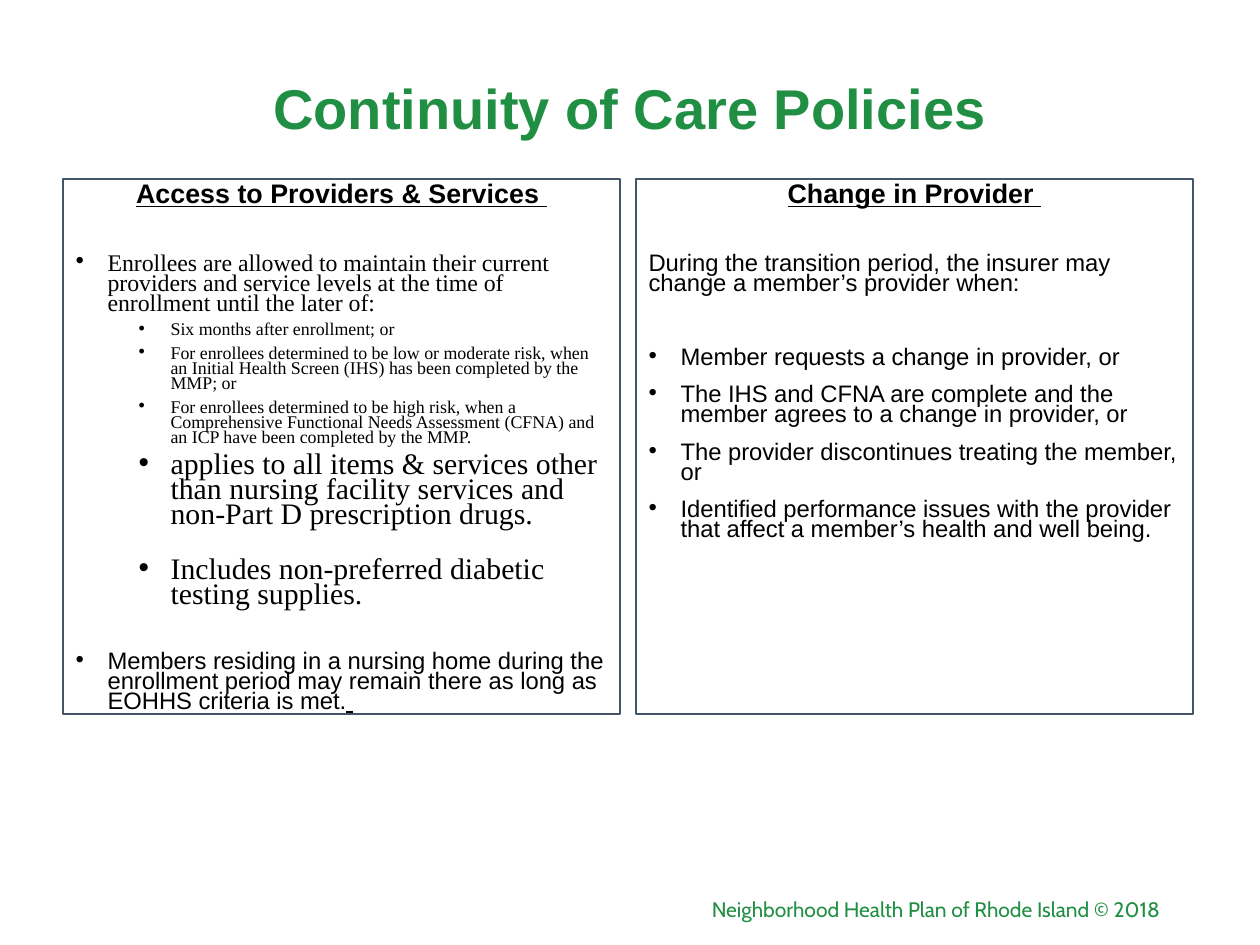
from dataclasses import dataclass

from lxml import etree
from pptx import Presentation
from pptx.dml.color import RGBColor
from pptx.enum.text import MSO_ANCHOR, MSO_AUTO_SIZE, PP_ALIGN
from pptx.oxml.ns import qn
from pptx.util import Pt

PX = 914400 / 126
CENTER, RIGHT = PP_ALIGN.CENTER, PP_ALIGN.RIGHT
MIDDLE, TOP = MSO_ANCHOR.MIDDLE, MSO_ANCHOR.TOP
NO_FIT = MSO_AUTO_SIZE.NONE


@dataclass
class Theme:
    green = RGBColor(0x20, 0x8F, 0x44)
    black = RGBColor(0, 0, 0)
    border = RGBColor(0x44, 0x54, 0x6A)
    sans = "Arial"
    serif = "Times New Roman"
    footer_font = "Cabin"
    title = 32
    heading = 15.3
    body = 13.6
    detail = 10.2
    emphasis = 17
    footer = 12


theme = Theme()


def place(shape, left, top, width, height, anchor):
    """Position a shape in px and fix how its text sits inside it."""
    shape.left, shape.top = round(left * PX), round(top * PX)
    shape.width, shape.height = round(width * PX), round(height * PX)
    frame = shape.text_frame
    frame.word_wrap = True
    frame.auto_size = NO_FIT
    frame.vertical_anchor = anchor
    return frame


def add_text(paragraph, text, font, size, color, bold=False, underline=False):
    run = paragraph.add_run()
    run.text = text
    run.font.name = font
    run.font.size = Pt(size)
    run.font.color.rgb = color
    run.font.bold = bold
    run.font.underline = underline


prs = Presentation()
prs.slide_width, prs.slide_height = round(1260 * PX), round(945 * PX)
slide = prs.slides.add_slide(prs.slide_layouts[3])
title, left_column, right_column = slide.placeholders

# Title, raised above the middle of its box
title_frame = place(title, 87, 50, 1086, 183, MIDDLE)
title_frame.margin_bottom = round(66 * PX)
title_line = title_frame.paragraphs[0]
title_line.alignment = CENTER
title_line.line_spacing = 0.9
add_text(title_line, "Continuity of Care Policies", theme.sans, theme.title,
         theme.green, bold=True)

# Each entry: text, font, size, text indent in px (0 = no bullet), space before
access_entries = [
    ("Enrollees are allowed to maintain their current providers and service "
     "levels at the time of enrollment until the later of:",
     theme.serif, theme.body, 32, 27),
    ("Six months after enrollment; or", theme.serif, theme.detail, 95, 5),
    ("For enrollees determined to be low or moderate risk, when an Initial "
     "Health Screen (IHS) has been completed by the MMP; or",
     theme.serif, theme.detail, 95, 5),
    ("For enrollees determined to be high risk, when a Comprehensive "
     "Functional Needs Assessment (CFNA) and an ICP have been completed by "
     "the MMP.", theme.serif, theme.detail, 95, 5),
    ("applies to all items & services other than nursing facility services "
     "and non-Part D prescription drugs.",
     theme.serif, theme.emphasis, 95, 5),
    ("Includes non-preferred diabetic testing supplies.",
     theme.serif, theme.emphasis, 95, 17),
    ("Members residing in a nursing home during the enrollment period may "
     "remain there as long as EOHHS criteria is met.",
     theme.sans, theme.body, 32, 25),
]
change_entries = [
    ("During the transition period, the insurer may change a member’s "
     "provider when:", theme.sans, theme.body, 0, 27),
    ("Member requests a change in provider, or",
     theme.sans, theme.body, 32, 31),
    ("The IHS and CFNA are complete and the member agrees to a change in "
     "provider, or", theme.sans, theme.body, 32, 10),
    ("The provider discontinues treating the member, or",
     theme.sans, theme.body, 32, 10),
    ("Identified performance issues with the provider that affect a member’s "
     "health and well being.", theme.sans, theme.body, 32, 10),
]
columns = [
    (left_column, "Access to Providers & Services ", access_entries),
    (right_column, "Change in Provider ", change_entries),
]

for index, (column, heading, entries) in enumerate(columns):
    column_frame = place(column, 63 + 573 * index, 179, 557, 535, TOP)
    column.line.color.rgb = theme.border
    column.line.width = Pt(0.75)

    heading_line = column_frame.paragraphs[0]
    heading_props = heading_line._p.get_or_add_pPr()
    heading_props.set("marL", "0")
    heading_props.set("indent", "0")
    etree.SubElement(heading_props, qn("a:buNone"))
    heading_line.alignment = CENTER
    heading_line.line_spacing = 0.7
    heading_line.space_before = Pt(0)
    add_text(heading_line, heading, theme.sans, theme.heading, theme.black,
             bold=True, underline=True)

    for text, font, size, indent, space_before in entries:
        entry = column_frame.add_paragraph()
        entry.level = 1 if indent > 32 else 0
        props = entry._p.get_or_add_pPr()
        props.set("marL", str(round(indent * PX)))
        props.set("indent", str(round(-min(indent, 32) * PX)))
        if indent:
            etree.SubElement(props, qn("a:buFont"), typeface=theme.sans)
            etree.SubElement(props, qn("a:buChar"), char="•")
        else:
            etree.SubElement(props, qn("a:buNone"))
        entry.line_spacing = 0.7
        entry.space_before = Pt(space_before)
        add_text(entry, text, font, size, theme.black)

# The closing sentence on the left ends in an underlined space
add_text(left_column.text_frame.paragraphs[-1], " ", theme.sans, theme.body,
         theme.black, bold=True, underline=True)

# Copyright line
footer = slide.shapes.add_textbox(0, 0, 0, 0)
footer_line = place(footer, 417, 892, 756, 34, MIDDLE).paragraphs[0]
footer_line.alignment = RIGHT
add_text(footer_line, "Neighborhood Health Plan of Rhode Island © 2018",
         theme.footer_font, theme.footer, theme.green)

prs.save("out.pptx")
